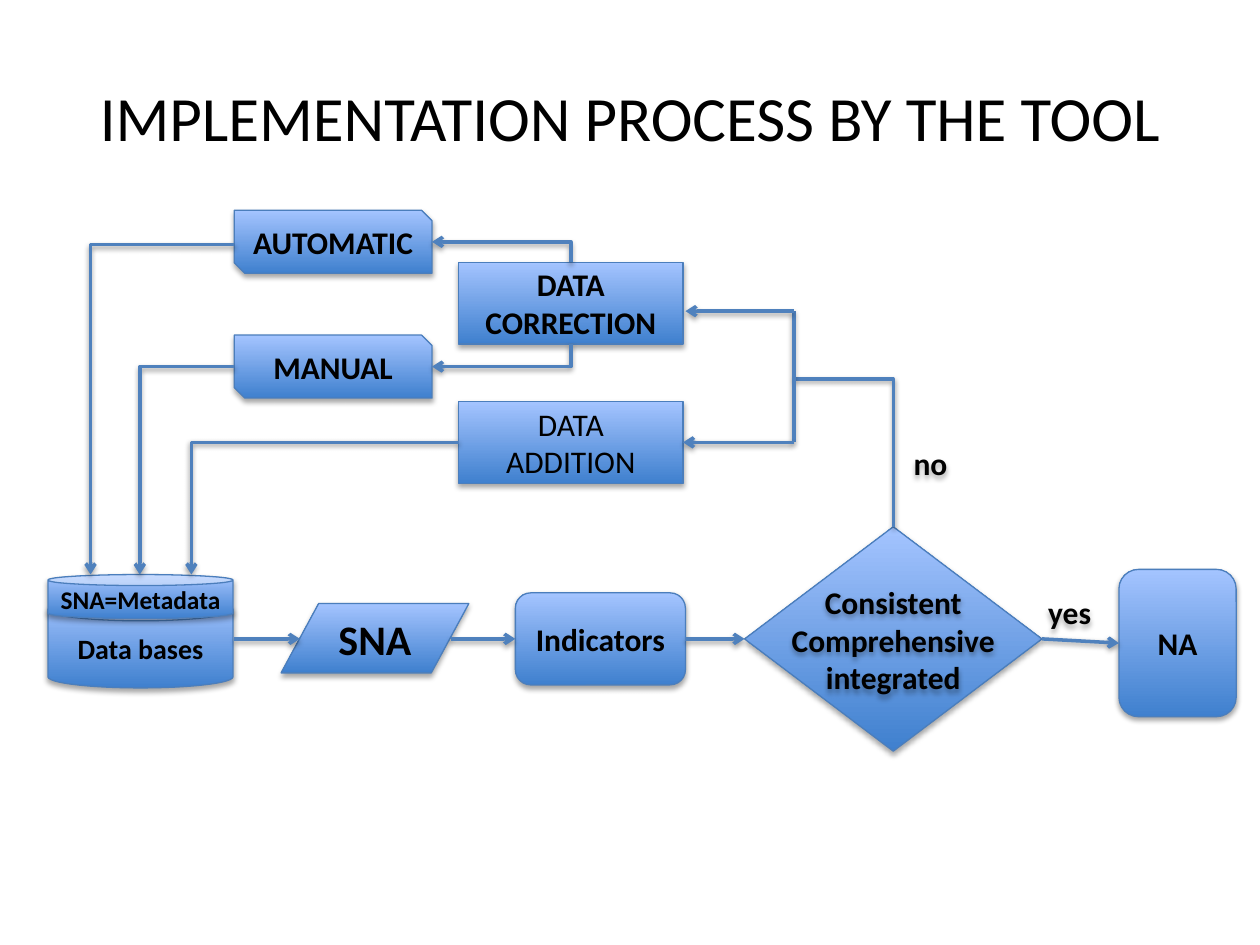
from typing import NamedTuple, Optional

from lxml.etree import SubElement
from pptx import Presentation
from pptx.dml.color import RGBColor
from pptx.enum.shapes import MSO_CONNECTOR as Wire, MSO_SHAPE as Form
from pptx.enum.text import MSO_ANCHOR as Anchor, PP_ALIGN as Align
from pptx.oxml.ns import qn
from pptx.util import Pt

BLACK = RGBColor(0x00, 0x00, 0x00)
DARK = RGBColor(0x3F, 0x80, 0xCE)
LIGHT = RGBColor(0xA4, 0xC4, 0xFF)
EDGE = RGBColor(0x4B, 0x7E, 0xBC)
LINK = RGBColor(0x4F, 0x81, 0xBD)
FONT = "Calibri"


class Node(NamedTuple):
    name: str
    form: Optional[Form]
    left: float
    top: float
    width: float
    height: float
    lines: tuple = ()
    size: float = 18
    bold: bool = True
    pad: float = 0


class Line(NamedTuple):
    start: tuple
    end: tuple
    head: bool = False
    tail: bool = True
    bent: bool = False
    source: Optional[tuple] = None
    target: Optional[tuple] = None


ROW = 365.1
NODES = [
    Node("base", Form.CAN, 27.4, 342, 105.8, 51.1, ("Data bases",), 16),
    Node("meta", Form.CAN, 27.4, 328.3, 105.8, 25.2, ("SNA=Metadata",), 14.5),
    Node("end", Form.ROUNDED_RECTANGLE, 639.4, 325.4, 67, 84.2, ("NA",)),
    Node("fix", Form.RECTANGLE, 262.1, 149.8, 128.2, 46.8,
         ("DATA CORRECTION",), pad=7.2),
    Node("add", Form.RECTANGLE, 262.1, 229.4, 128.2, 46.8,
         ("DATA ADDITION",), bold=False, pad=7.2),
    Node("auto", Form.SNIP_2_DIAG_RECTANGLE, 133.9, 120.2, 113, 36, ("AUTOMATIC",)),
    Node("hand", Form.SNIP_2_DIAG_RECTANGLE, 133.9, 191.5, 113, 36, ("MANUAL",)),
    Node("sna", Form.FLOWCHART_DATA, 160.6, 344.9, 107.3, 39.6, ("SNA",), 24),
    Node("index", Form.FLOWCHART_ALTERNATE_PROCESS, 294.5, 338.8, 97.2, 52.6,
         ("Indicators",)),
    Node("test", Form.DIAMOND, 425.5, 301, 169.9, 128.2),
    Node("ask", None, 436.3, 329.8, 148.3, 71.3,
         ("Consistent", "Comprehensive", "integrated")),
    Node("no", None, 511.9, 252.7, 39.6, 23.8, ("no",)),
    Node("yes", None, 591.1, 341.3, 40.3, 17.3, ("yes",)),
]
LINES = [
    Line((133.9, 139.7), (51.8, 328.3), bent=True),
    Line((133.9, 209.5), (79.9, 328.3), bent=True),
    Line((262.1, 252.8), (109.4, 328.3), bent=True),
    Line((246.9, 138.2), (326.2, 149.8), head=True, tail=False, bent=True),
    Line((246.9, 209.5), (326.2, 196.6), head=True, tail=False, bent=True),
    Line((453.6, 216.7), (510.5, 301), tail=False, bent=True),
    Line((453.6, 177.8), (453.6, 252.8), tail=False),
    Line((453.6, 177.8), (391.7, 177.8)),
    Line((453.6, 252.8), (390.3, 252.8), target=("add", 3)),
    Line((133.9, ROW), (171.4, ROW)),
    Line((257.8, ROW), (294.5, ROW), target=("index", 1)),
    Line((391.7, ROW), (425.5, ROW), source=("index", 3), target=("test", 1)),
    Line((595.4, ROW), (639.4, 367.5), source=("test", 3), target=("end", 1)),
]


def add_shade(shape, gap: float, alpha: int) -> None:
    effect = SubElement(shape._element.spPr, qn("a:effectLst"))
    shade = SubElement(effect, qn("a:outerShdw"), blurRad=str(Pt(3.1)),
                       dist=str(Pt(gap)), dir="5400000", rotWithShape="0")
    color = SubElement(shade, qn("a:srgbClr"), val=str(BLACK))
    SubElement(color, qn("a:alpha"), val=str(alpha * 1000))


def add_run(para, text: str, size: float, bold: bool) -> None:
    para.alignment = Align.CENTER
    run = para.add_run()
    run.text = text
    run.font.name = FONT
    run.font.size = Pt(size)
    run.font.bold = bold
    run.font.color.rgb = BLACK


def add_node(slide, node: Node):
    box = [Pt(v) for v in (node.left, node.top, node.width, node.height)]
    if node.form is None:
        shape = slide.shapes.add_textbox(*box)
    else:
        shape = slide.shapes.add_shape(node.form, *box)
        shape.fill.gradient()
        shape.fill.gradient_angle = 90
        for stop, color in zip(shape.fill.gradient_stops, (DARK, LIGHT)):
            stop.color.rgb = color
        shape.line.color.rgb = EDGE
        shape.line.width = Pt(0.75)
    add_shade(shape, 1.8, 35)
    frame = shape.text_frame
    frame.word_wrap = True
    frame.vertical_anchor = Anchor.MIDDLE
    frame.margin_left = frame.margin_right = Pt(node.pad)
    frame.margin_top = frame.margin_bottom = Pt(0)
    for i, text in enumerate(node.lines):
        para = frame.add_paragraph() if i else frame.paragraphs[0]
        add_run(para, text, node.size, node.bold)
    return shape


def add_line(slide, line: Line, shapes: dict) -> None:
    kind = Wire.ELBOW if line.bent else Wire.STRAIGHT
    wire = slide.shapes.add_connector(
        kind, *[Pt(v) for v in line.start + line.end])
    if line.source:
        wire.begin_connect(shapes[line.source[0]], line.source[1])
    if line.target:
        wire.end_connect(shapes[line.target[0]], line.target[1])
    wire.line.color.rgb = LINK
    wire.line.width = Pt(2)
    stroke = wire.line._get_or_add_ln()
    for show, tag in ((line.head, "a:headEnd"), (line.tail, "a:tailEnd")):
        if show:
            SubElement(stroke, qn(tag), type="arrow")
    if line.bent:
        guides = wire._element.spPr.find(qn("a:prstGeom")).get_or_add_avLst()
        SubElement(guides, qn("a:gd"), name="adj1", fmla="val 100000")
    add_shade(wire, 1.6, 38)


def main() -> None:
    deck = Presentation()
    deck.slide_width, deck.slide_height = Pt(720), Pt(540)
    slide = deck.slides.add_slide(deck.slide_layouts[5])
    title = slide.shapes.title
    title.left, title.top, title.width, title.height = Pt(36), Pt(21.6), Pt(648), Pt(90)
    title.text_frame.vertical_anchor = Anchor.MIDDLE
    add_run(title.text_frame.paragraphs[0],
            "IMPLEMENTATION PROCESS BY THE TOOL", 36, False)
    shapes = {node.name: add_node(slide, node) for node in NODES}
    for line in LINES:
        add_line(slide, line, shapes)
    deck.save("out.pptx")


if __name__ == "__main__":
    main()
